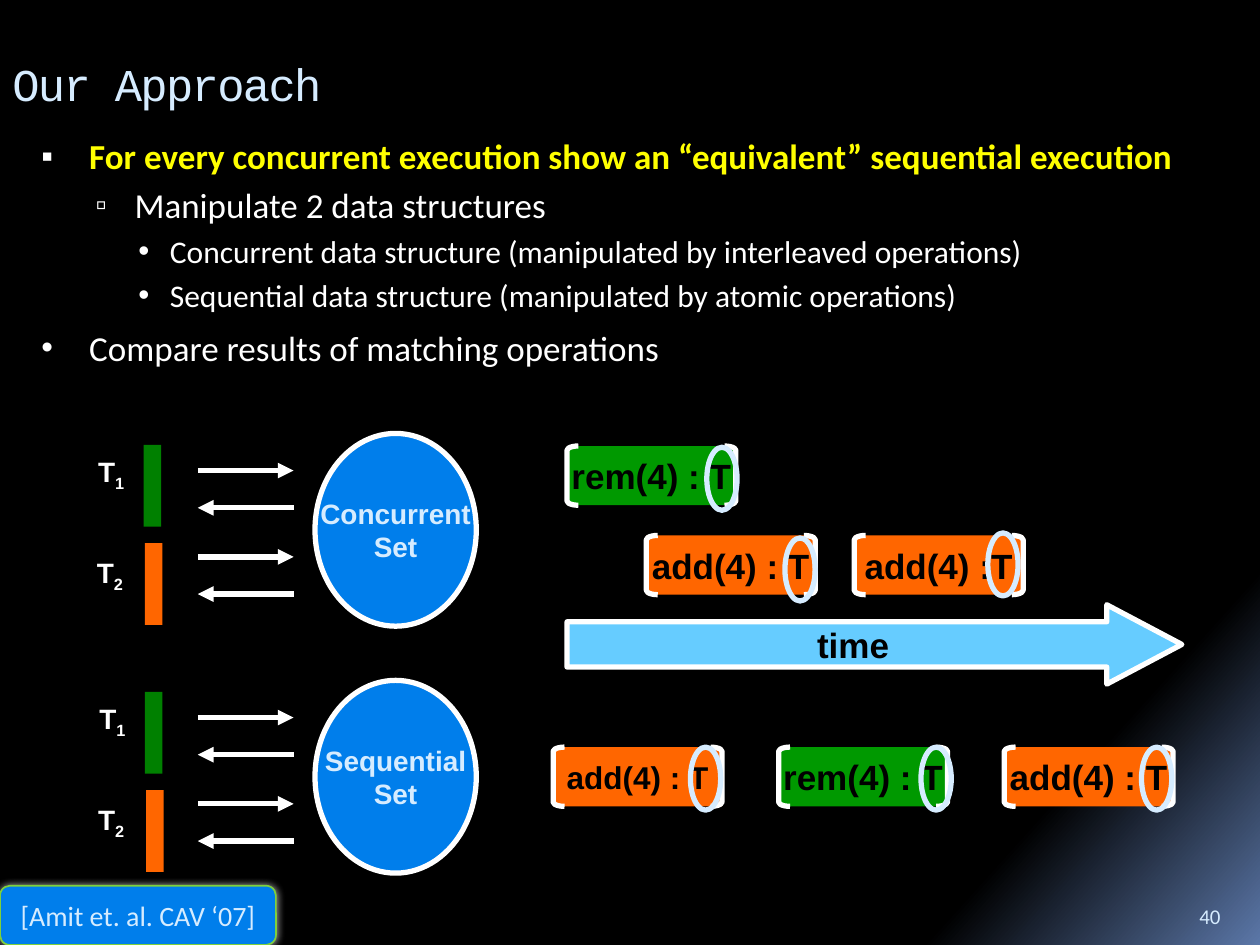
from lxml import etree
from pptx import Presentation
from pptx.dml.color import RGBColor
from pptx.enum.shapes import MSO_CONNECTOR as Link, MSO_SHAPE as Kind
from pptx.enum.text import MSO_ANCHOR as Anchor, PP_ALIGN as Align
from pptx.oxml.ns import qn
from pptx.util import Inches, Pt

hex_color = RGBColor.from_string
WHITE, PALE, BLUE, ORANGE, GREEN = "FFFFFF", "D6ECFF", "007EEB", "FF6600", "009900"

deck = Presentation()
deck.slide_width, deck.slide_height = Inches(10), Inches(7.5)
COL, ROW = deck.slide_width / 100, deck.slide_height / 75
page = deck.slides.add_slide(deck.slide_layouts[6])

backdrop = page.background.fill
backdrop.gradient()
backdrop.gradient_angle = 360 - 42
for stop, (place, color) in zip(backdrop.gradient_stops, [(0.84, "000000"), (1, "5B77A8")]):
    stop.position = place
    stop.color.rgb = hex_color(color)


def draw(kind, col, row, cols, rows, fill=None, line=None, width=3, adjust=()):
    """Place a preset shape, or a text box when kind is None, on the grid."""
    area = [round(n) for n in (col * COL, row * ROW, cols * COL, rows * ROW)]
    if kind is None:
        return page.shapes.add_textbox(*area)
    shape = page.shapes.add_shape(kind, *area)
    shape.shadow.inherit = False
    for index, value in enumerate(adjust):
        shape.adjustments[index] = value
    if fill:
        shape.fill.solid()
        shape.fill.fore_color.rgb = hex_color(fill)
    else:
        shape.fill.background()
    if line:
        shape.line.color.rgb = hex_color(line)
        shape.line.width = Pt(width)
    else:
        shape.line.fill.background()
    return shape


def write(box, lines, color, size, name="Arial", bold=True, wrap=False,
          anchor=Anchor.MIDDLE, align=Align.CENTER):
    """Fill a box with one paragraph per line and return the paragraphs."""
    frame = box.text_frame
    frame.word_wrap, frame.vertical_anchor = wrap, anchor
    style = {"name": name, "size": Pt(size), "bold": bold}
    for index, line in enumerate(lines):
        para = frame.paragraphs[0] if index == 0 else frame.add_paragraph()
        para.alignment = align
        span = para.add_run()
        span.text = line
        for key, value in style.items():
            setattr(span.font, key, value)
        span.font.color.rgb = hex_color(color)
    return frame.paragraphs


# Title
title = write(draw(None, 0, 3.1, 100, 7.1), ["Our Approach"], PALE, 26,
              "Courier New", bold=False, wrap=True, align=Align.LEFT)
title[0].runs[0]._r.get_or_add_rPr().set("spc", "-100")

# Bullets: text, level, size, space before, bullet, bullet size in percent
margins = [(0.45, -0.38), (0.81, -0.31), (1.09, -0.25)]
bullets = [
    ("For every concurrent execution show an “equivalent” sequential execution", 0, 20, 0, "▪", 95),
    ("Manipulate 2 data structures", 1, 20, 4, "▫", 90),
    ("Concurrent data structure (manipulated by interleaved operations)", 2, 18, 3.6, "•", 100),
    ("Sequential data structure (manipulated by atomic operations)", 2, 18, 3.6, "•", 100),
    ("Compare results of matching operations", 0, 20, 7, "•", 95),
]
body = write(draw(None, 1.6, 10.2, 96.9, 22), [item[0] for item in bullets], WHITE, 20,
             "Calibri", bold=False, wrap=True, anchor=Anchor.TOP, align=Align.LEFT)
for para, (_, level, size, before, mark, percent) in zip(body, bullets):
    para.level, para.space_before = level, Pt(before)
    para.runs[0].font.size = Pt(size)
    props = para._p.get_or_add_pPr()
    for key, inches in zip(("marL", "indent"), margins[level]):
        props.set(key, str(Inches(inches)))
    etree.SubElement(etree.SubElement(props, qn("a:buClr")), qn("a:srgbClr"), val=WHITE)
    etree.SubElement(props, qn("a:buSzPct"), val=str(percent * 1000))
    etree.SubElement(props, qn("a:buFont"), typeface="Arial")
    etree.SubElement(props, qn("a:buChar"), char=mark)
claim = body[0].runs[0].font
claim.bold, claim.color.rgb = True, hex_color("FFFF00")

# Time axis
write(draw(Kind.RIGHT_ARROW, 45, 48, 48.8, 6.3, "66CCFF", WHITE, adjust=(0.569, 0.946)),
      ["time"], "000000", 20)

# Operations: column, row, text, size, fill, column and row of the result ring
operations = [
    (45, 35.4, "rem(4) : T", 20, GREEN, 56.1, 35.5),
    (67.8, 42.5, "add(4) :T", 20, ORANGE, 78.4, 42.3),
    (51.3, 42.5, "add(4) : T", 20, ORANGE, 62.3, 42.7),
    (79.7, 59.3, "add(4) : T", 20, ORANGE, 90.6, 59.3),
    (43.9, 59.3, "add(4) : T", 18, ORANGE, 54.8, 59.3),
    (61.8, 59.3, "rem(4) : T", 20, GREEN, 73.1, 59.3),
]
for col, row, text, size, fill, *_ in operations:
    write(draw(Kind.RECTANGLE, col, row, 13.4, 4.7, fill), [text], "000000", size)
    draw(Kind.LEFT_BRACKET, col, row, 0.9, 4.7, line=WHITE, adjust=(0.374,))
    draw(Kind.RIGHT_BRACKET, col + 12.5, row, 0.9, 4.7, line=WHITE, adjust=(0.378,))

# Two sets, each called by two threads
for name, top, shift in [("Concurrent", 34.4, 0), ("Sequential", 54, 0.1)]:
    write(draw(Kind.OVAL, 25, top, 12.8, 15.3, BLUE, WHITE), [name, "Set"], PALE, 16)
    for offset, end in [(2.95, "tailEnd"), (5.9, "headEnd"), (9.8, "tailEnd"), (12.75, "headEnd")]:
        height = round((top + offset) * ROW)
        arrow = page.shapes.add_connector(
            Link.STRAIGHT, round(15.7 * COL), height, round(23.3 * COL), height)
        arrow.line.color.rgb = hex_color(WHITE)
        arrow.line.width = Pt(3)
        etree.SubElement(arrow.line._get_or_add_ln(), qn("a:" + end), type="triangle")
        etree.SubElement(arrow._element.spPr, qn("a:effectLst"))
    for number, fill in enumerate(["008000", ORANGE]):
        label = write(draw(None, 6.8 + shift - number * 0.1, top + 1.2 + number * 8, 5.2, 3.7),
                      ["T"], WHITE, 16, wrap=True, anchor=Anchor.TOP, align=Align.LEFT)[0]
        index = label.add_run()
        index.text = str(number + 1)
        for key in ("name", "size", "bold"):
            setattr(index.font, key, getattr(label.runs[0].font, key))
        index.font.color.rgb = hex_color(WHITE)
        index._r.get_or_add_rPr().set("baseline", "-25000")
        draw(Kind.RECTANGLE, 11.4 + shift + number * 0.1, top + 0.9 + number * 7.8, 1.4, 6.5, fill)

for *_, ring_col, ring_row in operations:
    draw(Kind.OVAL, ring_col, ring_row, 2.4, 5, line=PALE)

# Page number and citation
write(draw(None, 94.2, 70.2, 5, 4), ["40"], PALE, 12, "Calibri", bold=False,
      wrap=True, anchor=Anchor.BOTTOM, align=Align.LEFT)
citation = draw(Kind.ROUNDED_RECTANGLE, 0, 70.3, 21.9, 4.7, BLUE, "7FD13B", 0.94)
write(citation, ["[Amit et. al. CAV ‘07]"], PALE, 16, "Calibri", bold=False, wrap=True)
effects = citation._element.spPr.find(qn("a:effectLst"))
glow = etree.SubElement(effects, qn("a:outerShdw"), blurRad=str(Pt(5)), dist="0")
tint = etree.SubElement(glow, qn("a:srgbClr"), val=WHITE)
etree.SubElement(tint, qn("a:alpha"), val="70000")

deck.save("out.pptx")
